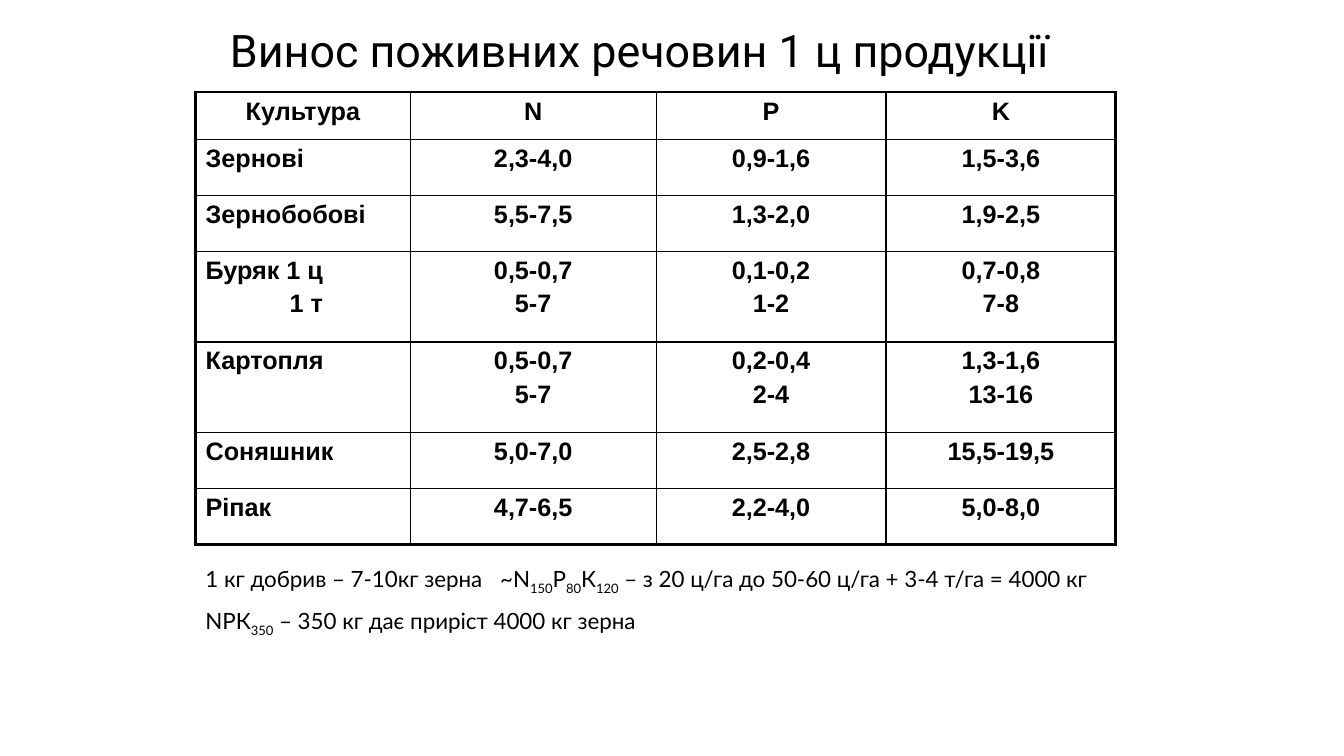
from lxml.etree import SubElement
from pptx import Presentation
from pptx.dml.color import RGBColor
from pptx.enum.text import MSO_ANCHOR, PP_ALIGN
from pptx.oxml.ns import qn
from pptx.util import Pt

BLACK = RGBColor(0, 0, 0)
WHITE = RGBColor(255, 255, 255)

TITLE = "Винос поживних речовин 1 ц продукції"
ROWS = [
    ["Культура", "N", "P", "K"],
    ["Зернові", "2,3-4,0", "0,9-1,6", "1,5-3,6"],
    ["Зернобобові", "5,5-7,5", "1,3-2,0", "1,9-2,5"],
    ["Буряк 1 ц\n1 т", "0,5-0,7\n5-7", "0,1-0,2\n1-2", "0,7-0,8\n7-8"],
    ["Картопля", "0,5-0,7\n5-7", "0,2-0,4\n2-4", "1,3-1,6\n13-16"],
    ["Соняшник", "5,0-7,0", "2,5-2,8", "15,5-19,5"],
    ["Ріпак", "4,7-6,5", "2,2-4,0", "5,0-8,0"],
]
NOTES = [
    [("1 кг добрив – 7-10кг зерна\t~N", False), ("150", True), ("Р", False),
     ("80", True), ("К", False), ("120", True),
     (" – з 20 ц/га до 50-60 ц/га + 3-4 т/га = 4000 кг", False)],
    [("NРК", False), ("350", True),
     (" – 350 кг дає приріст 4000 кг зерна", False)],
]
COLUMN_WIDTHS = [153.4, 175.6, 164.2, 164.2]
HEADER_HEIGHT, SINGLE_HEIGHT, DOUBLE_HEIGHT = 33.8, 40, 64.7
LEFT, TABLE_TOP = 139.7, 65.8
SECOND_LINE_INDENT = 60
NOTE_TAB = 210.5
THIN, THICK = 1, 2.25


def write(para, text, size=18, font="Arial", bold=False, subscript=False):
    span = para.add_run()
    span.text = text
    span.font.size = Pt(size)
    span.font.name = font
    span.font.bold = bold
    span.font.color.rgb = BLACK
    if subscript:
        span._r.get_or_add_rPr().set("baseline", "-25000")


def paragraph(frame, index, gap):
    if index == 0:
        return frame.paragraphs[0]
    para = frame.add_paragraph()
    para.space_before = Pt(gap)
    return para


def draw_borders(cell, widths):
    properties = cell._tc.get_or_add_tcPr()
    for side, width in zip("LRTB", widths):
        line = SubElement(properties, qn(f"a:ln{side}"), w=str(Pt(width)))
        fill = SubElement(line, qn("a:solidFill"))
        SubElement(fill, qn("a:srgbClr"), val=str(BLACK))


def row_height(index, values):
    if index == 0:
        return HEADER_HEIGHT
    return DOUBLE_HEIGHT if "\n" in values[1] else SINGLE_HEIGHT


def add_title(page):
    title = page.shapes.title
    title.left, title.top, title.width, title.height = Pt(157), Pt(15.1), Pt(658.8), Pt(45.4)
    title.text_frame.vertical_anchor = MSO_ANCHOR.MIDDLE
    title.text_frame.word_wrap = True
    para = title.text_frame.paragraphs[0]
    para.alignment = PP_ALIGN.LEFT
    para.line_spacing = 0.9
    write(para, TITLE, size=32, font="Roboto")


def add_nutrient_table(page):
    heights = [row_height(index, values) for index, values in enumerate(ROWS)]
    last_row, last_column = len(ROWS) - 1, len(COLUMN_WIDTHS) - 1
    table = page.shapes.add_table(
        len(ROWS), len(COLUMN_WIDTHS), Pt(LEFT), Pt(TABLE_TOP),
        Pt(sum(COLUMN_WIDTHS)), Pt(sum(heights))).table
    table.first_row = table.horz_banding = False
    for column, width in zip(table.columns, COLUMN_WIDTHS):
        column.width = Pt(width)
    for r, values in enumerate(ROWS):
        table.rows[r].height = Pt(heights[r])
        for c, value in enumerate(values):
            cell = table.cell(r, c)
            outer = (c == 0, c == last_column, r == 0, r == last_row)
            draw_borders(cell, [THICK if edge else THIN for edge in outer])
            cell.fill.solid()
            cell.fill.fore_color.rgb = WHITE
            centred = r == 0 or c > 0
            for index, text in enumerate(value.split("\n")):
                para = paragraph(cell.text_frame, index, 3.6)
                para.alignment = PP_ALIGN.CENTER if centred else PP_ALIGN.LEFT
                if index and not centred:
                    para._p.get_or_add_pPr().set("marL", str(Pt(SECOND_LINE_INDENT)))
                write(para, text, bold=True)


def add_notes_box(page):
    box = page.shapes.add_textbox(Pt(LEFT), Pt(400.3), Pt(674.6), Pt(84.2))
    box.text_frame.word_wrap = True
    for index, parts in enumerate(NOTES):
        para = paragraph(box.text_frame, index, 8)
        if index == 0:
            tabs = SubElement(para._p.get_or_add_pPr(), qn("a:tabLst"))
            SubElement(tabs, qn("a:tab"), pos=str(Pt(NOTE_TAB)), algn="l")
        for text, subscript in parts:
            write(para, text, size=16, font="Lato", subscript=subscript)


def main():
    deck = Presentation()
    deck.slide_width, deck.slide_height = Pt(960), Pt(540)
    page = deck.slides.add_slide(deck.slide_layouts[5])
    add_title(page)
    add_nutrient_table(page)
    add_notes_box(page)
    deck.save("out.pptx")


if __name__ == "__main__":
    main()
